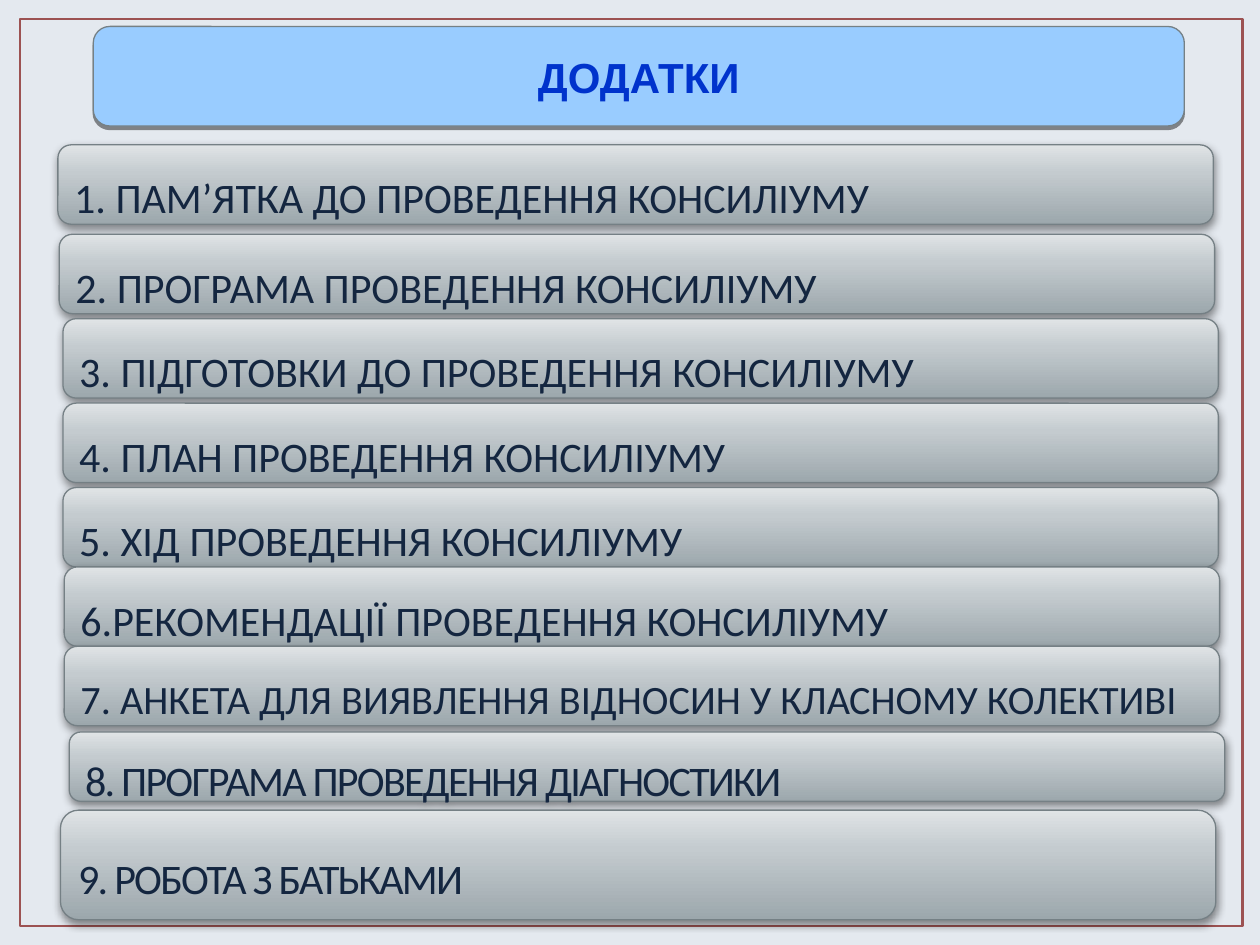
from copy import deepcopy

from lxml import etree
from pptx import Presentation
from pptx.dml.color import RGBColor
from pptx.enum import shapes, text
from pptx.oxml import ns
from pptx.util import Inches, Pt


def rgb(code):
    return RGBColor.from_string(code)


def add_box(left, top, width, height, words, font, size, color, align, blur):
    """Rounded box with a grey outline, a drop shadow and one line of text."""
    box = slide.shapes.add_shape(
        shapes.MSO_SHAPE.ROUNDED_RECTANGLE,
        Inches(left), Inches(top), Inches(width), Inches(height))
    box.line.color.rgb = rgb("758085")
    box.line.width = Pt(0.75)

    # Shadow straight below
    box.shadow.inherit = False
    effects = box._element.spPr.find(ns.qn("a:effectLst"))
    shade = etree.SubElement(
        effects, ns.qn("a:outerShdw"), blurRad=str(Pt(blur)),
        dist=str(Pt(2)), dir="5400000", rotWithShape="0")
    black = etree.SubElement(shade, ns.qn("a:srgbClr"), val="000000")
    etree.SubElement(black, ns.qn("a:alpha"), val="43000")

    frame = box.text_frame
    frame.word_wrap = True
    frame.vertical_anchor = text.MSO_ANCHOR.MIDDLE
    frame.text = words
    para = frame.paragraphs[0]
    para.alignment = align
    run = para.runs[0]
    run.font.name = font
    run.font.size = Pt(size)
    run.font.color.rgb = rgb(color)
    return box, para, run


deck = Presentation()
deck.slide_width, deck.slide_height = Inches(10), Inches(7.5)
slide = deck.slides.add_slide(deck.slide_layouts[6])
slide.background.fill.solid()
slide.background.fill.fore_color.rgb = rgb("E4E9EF")

# Border around the slide
border = slide.shapes.add_shape(
    shapes.MSO_SHAPE.RECTANGLE,
    Inches(0.16), Inches(0.15), Inches(9.7), Inches(7.2))
border.shadow.inherit = False
border.fill.background()
border.line.color.rgb = rgb("9C5252")
border.line.width = Pt(1.5)

# Title
title, para, run = add_box(0.74, 0.21, 8.66, 0.79, "ДОДАТКИ", "Arial", 24,
                           "0033CC", text.PP_ALIGN.CENTER, 0)
title.fill.solid()
title.fill.fore_color.rgb = rgb("99CCFF")
run.font.bold = True

# List of appendices: left, top, height, size, letter spacing, words
items = [
    (0.46, 1.15, 0.63, 24, 0, "1. ПАМ’ЯТКА ДО ПРОВЕДЕННЯ КОНСИЛІУМУ"),
    (0.47, 1.86, 0.63, 24, 0, "2. ПРОГРАМА ПРОВЕДЕННЯ КОНСИЛІУМУ"),
    (0.5, 2.53, 0.63, 24, 0, "3. ПІДГОТОВКИ ДО ПРОВЕДЕННЯ КОНСИЛІУМУ"),
    (0.5, 3.2, 0.63, 24, 0, "4. ПЛАН ПРОВЕДЕННЯ КОНСИЛІУМУ"),
    (0.5, 3.87, 0.63, 24, 0, "5. ХІД ПРОВЕДЕННЯ КОНСИЛІУМУ"),
    (0.51, 4.5, 0.63, 24, 0, "6.РЕКОМЕНДАЦІЇ ПРОВЕДЕННЯ КОНСИЛІУМУ"),
    (0.51, 5.13, 0.63, 23, 0,
     "7. АНКЕТА ДЛЯ ВИЯВЛЕННЯ ВІДНОСИН У КЛАСНОМУ КОЛЕКТИВІ"),
    (0.55, 5.81, 0.55, 24, -1, "8. ПРОГРАМА ПРОВЕДЕННЯ ДІАГНОСТИКИ"),
    (0.48, 6.43, 0.87, 24, -1, "9. РОБОТА З БАТЬКАМИ"),
]
stops = [(0, "9CA7AC"), (0.65, "C4CBCF"), (1, "E0E4E6")]

for left, top, height, size, gap, words in items:
    box, para, run = add_box(left, top, 9.17, height, words, "Calibri", size,
                             "142640", text.PP_ALIGN.JUSTIFY, 5)
    para.line_spacing = 1.5
    if gap:
        run.font._element.set("spc", str(gap * 100))

    # Three-stop gradient, dark at the bottom
    box.fill.gradient()
    box.fill.gradient_angle = 90
    grad = box._element.spPr.find(".//" + ns.qn("a:gsLst"))
    grad.insert(1, deepcopy(grad[0]))
    for stop, (pos, code) in zip(box.fill.gradient_stops, stops):
        stop.position = pos
        stop.color.rgb = rgb(code)

deck.save("out.pptx")
